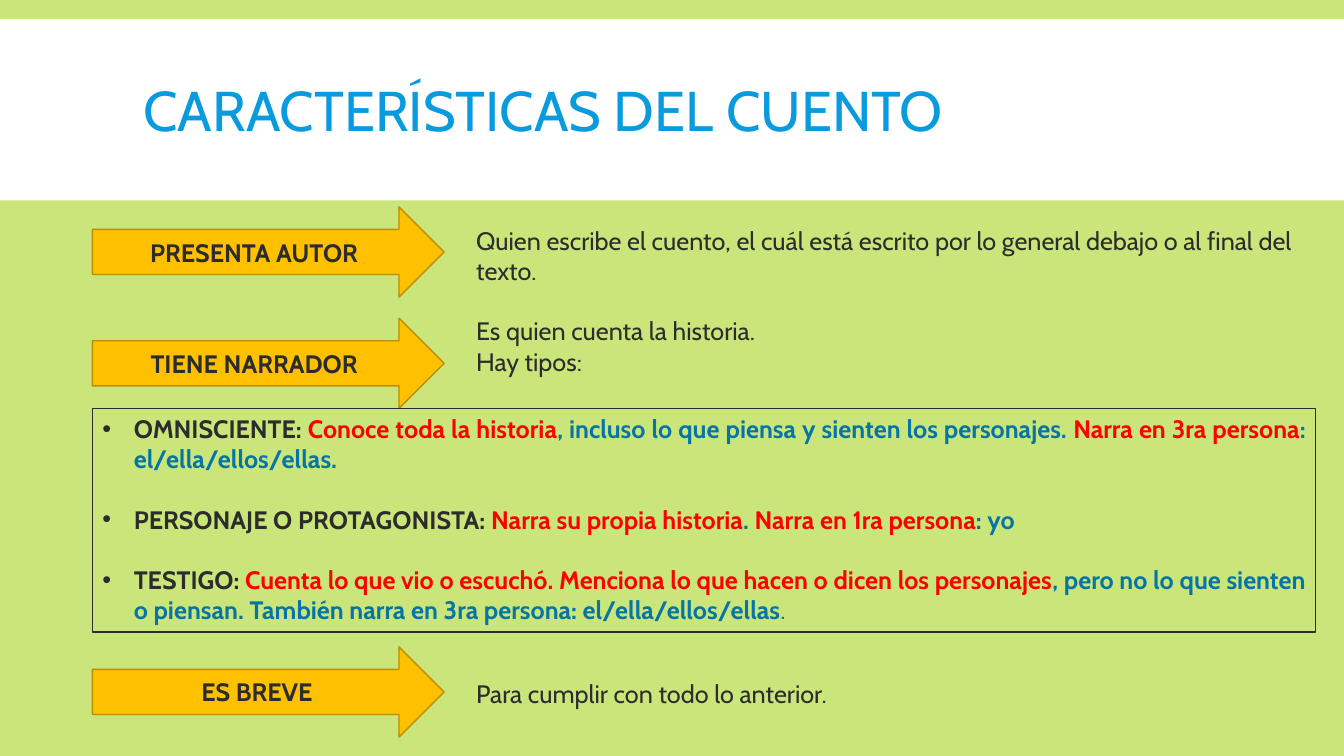
"""Build the slide on the characteristics of the short story."""
from dataclasses import dataclass

import lxml.etree
import pptx
import pptx.dml.color
import pptx.enum.shapes
import pptx.enum.text
import pptx.oxml.ns
import pptx.shapes.autoshape
import pptx.slide
import pptx.text.text
import pptx.util

RGB = pptx.dml.color.RGBColor
SHAPE = pptx.enum.shapes.MSO_SHAPE
ALIGN = pptx.enum.text.PP_ALIGN
ANCHOR = pptx.enum.text.MSO_ANCHOR

LIME = RGB(0xCA, 0xE6, 0x7B)
WHITE = RGB(0xFF, 0xFF, 0xFF)
SKY = RGB(0x09, 0x9B, 0xDD)
AMBER = RGB(0xFF, 0xC0, 0x00)
OCHRE = RGB(0xBD, 0x8E, 0x00)
INK = RGB(0x2C, 0x2C, 0x2C)
RED = RGB(0xFF, 0x00, 0x00)
BLUE = RGB(0x07, 0x74, 0xA6)

FONT = "Cabin"
EMU_PER_PX = 9525
BODY_PT = 18
MARGIN_LEFT = 88
ARROW_WIDTH, ARROW_HEIGHT = 335, 86
DETAIL_LEFT, DETAIL_WIDTH = 444, 809
BULLET_INDENT = 30


@dataclass(frozen=True)
class Feature:
    """A labelled arrow with its explanation."""
    label: str
    arrow_top: int
    details: tuple[str, ...]
    details_top: int
    details_height: int


@dataclass(frozen=True)
class Piece:
    """A stretch of text in one colour."""
    text: str
    color: RGB
    bold: bool = True


FEATURES = (
    Feature("PRESENTA AUTOR ", 197,
            ("Quien escribe el cuento, el cuál está escrito por lo general "
             "debajo o al final del texto.",), 210, 67),
    Feature("TIENE NARRADOR ", 303,
            ("Es quien cuenta la historia.", "Hay tipos:"), 296, 67),
    Feature("ES BREVE", 616, ("Para cumplir con todo lo anterior.",), 641, 38),
)

NARRATORS = (
    (Piece("OMNISCIENTE: ", INK),
     Piece("Conoce toda la historia", RED),
     Piece(", incluso lo que piensa y sienten los personajes. ", BLUE),
     Piece("Narra en 3ra persona", RED),
     Piece(": el/ella/ellos/ellas. ", BLUE)),
    (Piece("PERSONAJE O PROTAGONISTA: ", INK),
     Piece("Narra su propia historia", RED),
     Piece(". ", BLUE),
     Piece("Narra en 1ra persona", RED),
     Piece(": yo ", BLUE)),
    (Piece("TESTIGO: ", INK),
     Piece("Cuenta lo que vio o escuchó. Menciona lo que hacen o dicen "
           "los personajes", RED),
     Piece(", pero no lo que sienten o piensan. También narra en 3ra persona: "
           "el/ella/ellos/ellas", BLUE),
     Piece(". ", BLUE, bold=False)),
)


def px(length: int) -> pptx.util.Emu:
    """Convert pixels to EMU."""
    return pptx.util.Emu(length * EMU_PER_PX)


def add_piece(paragraph: pptx.text.text._Paragraph, piece: Piece,
              size: int = BODY_PT) -> None:
    """Append one formatted run."""
    run = paragraph.add_run()
    run.text = piece.text
    run.font.name = FONT
    run.font.size = pptx.util.Pt(size)
    run.font.bold = piece.bold
    run.font.color.rgb = piece.color


def fill_paragraphs(frame: pptx.text.text.TextFrame,
                    paragraphs: tuple[tuple[Piece, ...], ...],
                    align: ALIGN = ALIGN.LEFT) -> None:
    """Write one aligned paragraph for each group of pieces."""
    frame.word_wrap = True
    for index, pieces in enumerate(paragraphs):
        paragraph = frame.add_paragraph() if index else frame.paragraphs[0]
        paragraph.alignment = align
        for piece in pieces:
            add_piece(paragraph, piece)


def add_panel(slide: pptx.slide.Slide, kind: SHAPE, left: int, top: int,
              width: int, height: int, fill: RGB | None = None,
              outline: RGB | None = None) -> pptx.shapes.autoshape.Shape:
    """Add a flat shape with an optional fill and outline."""
    panel = slide.shapes.add_shape(kind, px(left), px(top), px(width), px(height))
    panel.shadow.inherit = False
    if fill is None:
        panel.fill.background()
    else:
        panel.fill.solid()
        panel.fill.fore_color.rgb = fill
    if outline is None:
        panel.line.fill.background()
    else:
        panel.line.color.rgb = outline
        panel.line.width = pptx.util.Pt(1)
    return panel


def add_heading(slide: pptx.slide.Slide) -> None:
    """Place the title over its white band."""
    band = add_panel(slide, SHAPE.RECTANGLE, 0, 18, 1280, 173, WHITE)
    title = slide.shapes.title
    title._element.addprevious(band._element)
    title.left, title.top = px(127), px(30)
    title.width, title.height = px(1027), px(158)
    frame = title.text_frame
    frame.auto_size = pptx.enum.text.MSO_AUTO_SIZE.NONE
    frame.vertical_anchor = ANCHOR.MIDDLE
    heading = frame.paragraphs[0]
    heading.alignment = ALIGN.LEFT
    heading.line_spacing = 0.85
    add_piece(heading, Piece("CARACTERÍSTICAS DEL CUENTO", SKY, bold=False), 40)


def add_feature(slide: pptx.slide.Slide, feature: Feature) -> None:
    """Draw one arrow and the text beside it."""
    arrow = add_panel(slide, SHAPE.RIGHT_ARROW, MARGIN_LEFT, feature.arrow_top,
                      ARROW_WIDTH, ARROW_HEIGHT, AMBER, OCHRE)
    arrow.text_frame.vertical_anchor = ANCHOR.MIDDLE
    fill_paragraphs(arrow.text_frame, ((Piece(feature.label, INK),),), ALIGN.CENTER)
    details = slide.shapes.add_textbox(px(DETAIL_LEFT), px(feature.details_top),
                                       px(DETAIL_WIDTH), px(feature.details_height))
    fill_paragraphs(details.text_frame, tuple(
        (Piece(text, INK, bold=False),) for text in feature.details))


def add_narrators(slide: pptx.slide.Slide) -> None:
    """Draw the framed bullet list of narrator types."""
    narrators = add_panel(slide, SHAPE.RECTANGLE, MARGIN_LEFT, 389, 1165, 213,
                          outline=INK)
    frame = narrators.text_frame
    frame.vertical_anchor = ANCHOR.TOP
    fill_paragraphs(frame, NARRATORS, ALIGN.JUSTIFY)
    for paragraph in frame.paragraphs:
        if paragraph is not frame.paragraphs[-1]:
            paragraph.space_after = pptx.util.Pt(21.6)
        properties = paragraph._p.get_or_add_pPr()
        properties.set("marL", str(px(BULLET_INDENT)))
        properties.set("indent", str(-px(BULLET_INDENT)))
        bullet_font = lxml.etree.SubElement(properties, pptx.oxml.ns.qn("a:buFont"))
        bullet_font.set("typeface", "Arial")
        bullet = lxml.etree.SubElement(properties, pptx.oxml.ns.qn("a:buChar"))
        bullet.set("char", "•")


def main() -> None:
    """Build and save the presentation."""
    presentation = pptx.Presentation()
    presentation.slide_width, presentation.slide_height = px(1280), px(720)
    slide = presentation.slides.add_slide(presentation.slide_layouts[5])
    slide.background.fill.solid()
    slide.background.fill.fore_color.rgb = LIME
    add_heading(slide)
    for feature in FEATURES:
        add_feature(slide, feature)
    add_narrators(slide)
    presentation.save("out.pptx")


if __name__ == "__main__":
    main()
